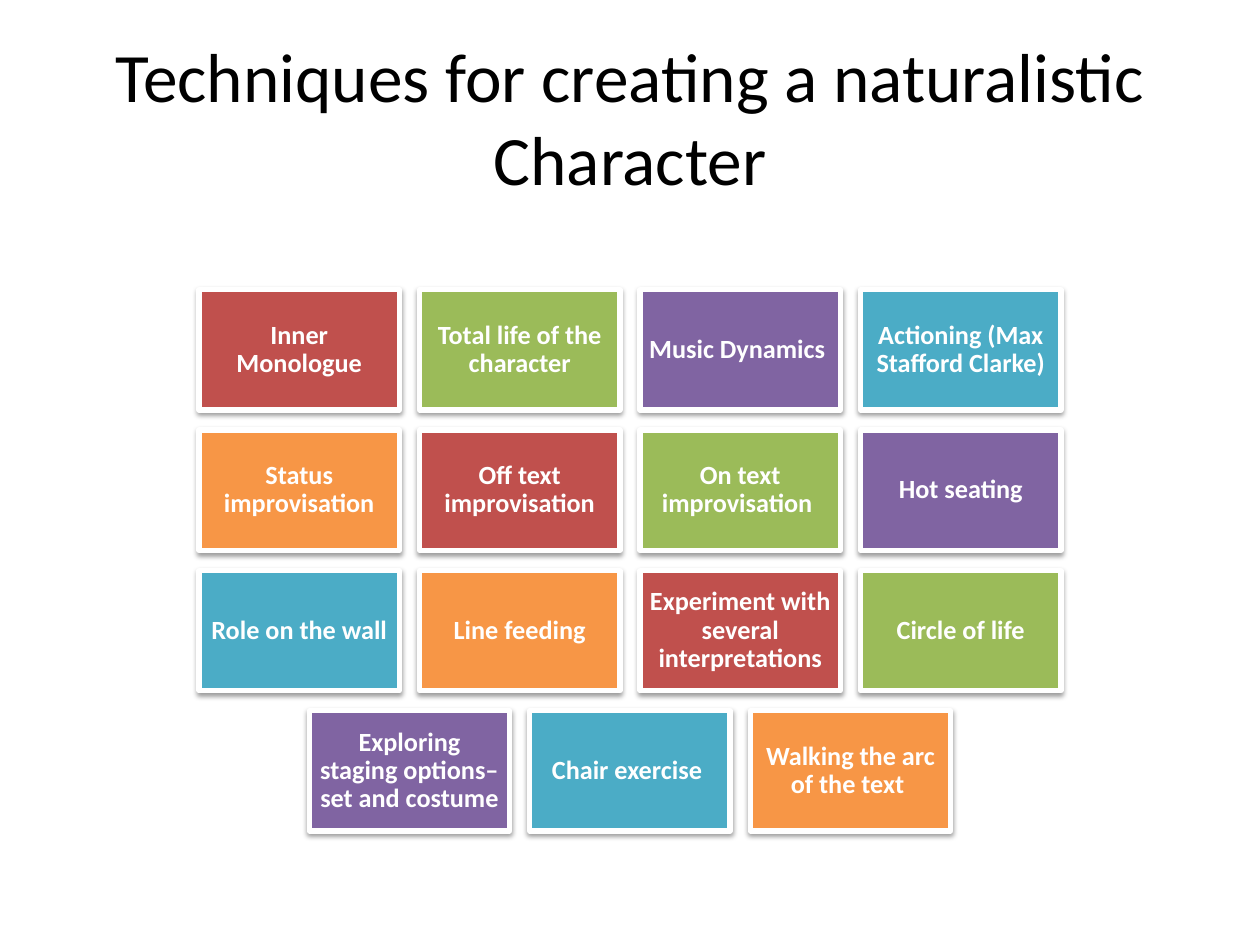
from itertools import cycle

from lxml import etree
from pptx import Presentation
from pptx.dml.color import RGBColor
from pptx.enum import shapes, text
from pptx.oxml import ns
from pptx.util import Pt

SLIDE_WIDTH, SLIDE_HEIGHT = 720, 540
CARD_WIDTH, CARD_HEIGHT = 114.5, 68.7
COLUMN_STEP, ROW_STEP = 126, 80.2
GRID_TOP = 165.6
CARD_COLOURS = ["C0504D", "9BBB59", "8064A2", "4BACC6", "F79646"]
TECHNIQUES = [
    ["Inner Monologue", "Total life of the character", "Music Dynamics ",
     "Actioning (Max Stafford Clarke)"],
    ["Status improvisation", "Off text improvisation",
     "On text improvisation ", "Hot seating"],
    ["Role on the wall", "Line feeding",
     "Experiment with several interpretations", "Circle of life"],
    ["Exploring staging options– set and costume", "Chair exercise ",
     "Walking the arc of the text "],
]


def colour(value):
    return RGBColor.from_string(value)


def write(frame, wording, size, ink, bold=False):
    frame.word_wrap = True
    frame.vertical_anchor = text.MSO_ANCHOR.MIDDLE
    paragraph = frame.paragraphs[0]
    paragraph.text = wording
    paragraph.alignment = text.PP_ALIGN.CENTER
    font = paragraph.font
    font.name, font.size, font.bold = "Calibri", Pt(size), bold
    font.color.rgb = colour(ink)
    return paragraph


def add_shadow(card):
    card.shadow.inherit = False
    effects = card._element.spPr.find(ns.qn("a:effectLst"))
    shadow = etree.SubElement(
        effects, ns.qn("a:outerShdw"), blurRad=str(Pt(3.1)),
        dist=str(Pt(1.6)), dir="5400000", rotWithShape="0")
    tint = etree.SubElement(shadow, ns.qn("a:srgbClr"), val="000000")
    etree.SubElement(tint, ns.qn("a:alpha"), val="38000")


def add_title(slide, wording):
    title = slide.shapes.add_textbox(Pt(36), Pt(21.6), Pt(648), Pt(90))
    write(title.text_frame, wording, 39.6, "000000")


def add_card(slide, technique, left, top, fill):
    card = slide.shapes.add_shape(
        shapes.MSO_SHAPE.RECTANGLE, Pt(left), Pt(top),
        Pt(CARD_WIDTH), Pt(CARD_HEIGHT))
    card.fill.solid()
    card.fill.fore_color.rgb = colour(fill)
    card.line.color.rgb = colour("FFFFFF")
    card.line.width = Pt(3)
    add_shadow(card)
    frame = card.text_frame
    frame.margin_left = frame.margin_right = Pt(4.5)
    frame.margin_top = frame.margin_bottom = Pt(4.5)
    write(frame, technique, 15, "FFFFFF", bold=True).line_spacing = 0.9


def add_techniques(slide):
    fills = cycle(CARD_COLOURS)
    for row, techniques in enumerate(TECHNIQUES):
        row_width = (len(techniques) - 1) * COLUMN_STEP + CARD_WIDTH
        row_left = (SLIDE_WIDTH - row_width) / 2
        for column, technique in enumerate(techniques):
            add_card(slide, technique, row_left + column * COLUMN_STEP,
                     GRID_TOP + row * ROW_STEP, next(fills))


def main():
    deck = Presentation()
    deck.slide_width, deck.slide_height = Pt(SLIDE_WIDTH), Pt(SLIDE_HEIGHT)
    slide = deck.slides.add_slide(deck.slide_layouts[6])
    add_title(slide, "Techniques for creating a naturalistic Character")
    add_techniques(slide)
    deck.save("out.pptx")


if __name__ == "__main__":
    main()
